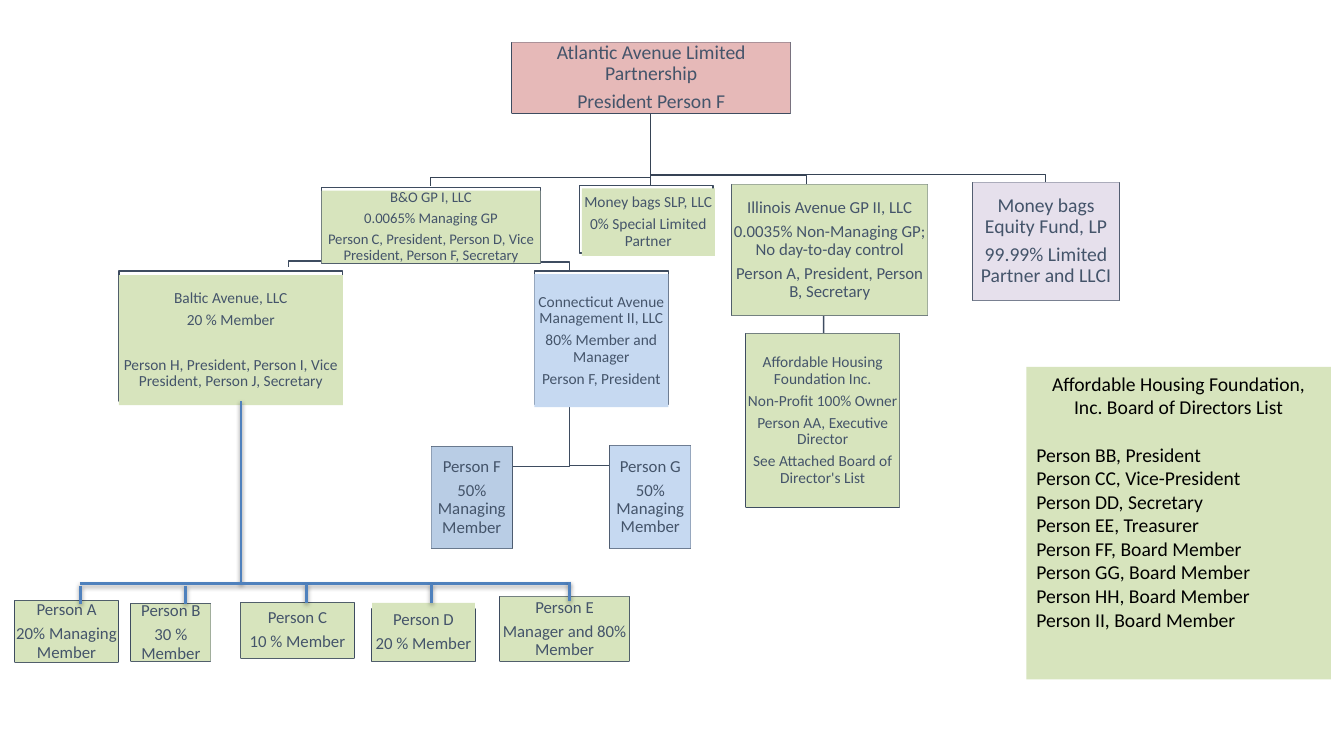
from dataclasses import dataclass
from lxml import etree
from pptx import Presentation
from pptx.dml.color import RGBColor
from pptx.enum import shapes, text
from pptx.oxml import ns
from pptx.util import Inches, Pt


@dataclass(frozen=True)
class Theme:
    font: str = "Calibri"
    ink: str = "44546A"
    black: str = "000000"
    white: str = "FFFFFF"
    border: str = "3E4C60"
    trunk: str = "364355"
    accent: str = "4F81BD"
    green: str = "D7E4BD"
    blue: str = "C6D9F1"
    steel: str = "B9CDE5"
    rose: str = "E6B9B8"
    lilac: str = "E6E0EC"
    large: float = 14
    medium: float = 12
    small: float = 11
    tiny: float = 10.5


T = Theme()

# Entities: lines, type size, fill, box (left, top, width, height), outline box if it differs
ENTITIES = [
    (["Atlantic Avenue Limited Partnership", "President Person F"],
     T.large, T.rose, (5.08, 0.42, 2.76, 0.7), None),
    (["B&O GP I, LLC", "0.0065% Managing GP",
      "Person C, President, Person D, Vice President, Person F, Secretary"],
     T.tiny, T.green, (3.19, 1.89, 2.17, 0.72), (3.19, 1.86, 2.17, 0.75)),
    (["Baltic Avenue, LLC", "20 % Member",
      "Person H, President, Person I, Vice President, Person J, Secretary"],
     T.small, T.green, (1.18, 2.73, 2.22, 1.29), (1.18, 2.69, 2.22, 1.29)),
    (["Person A", "20% Managing Member"],
     T.medium, T.green, (0.15, 5.96, 1.02, 0.61), None),
    (["Person B", "30 % Member"], T.medium, T.green, (1.3, 5.99, 0.79, 0.57), None),
    (["Person C", "10 % Member"], T.medium, T.green, (2.39, 5.98, 1.12, 0.55), None),
    (["Person D", "20 % Member"],
     T.medium, T.green, (3.69, 5.98, 1.02, 0.58), (3.69, 6.04, 1.02, 0.52)),
    (["Person E", "Manager and 80% Member"],
     T.medium, T.green, (4.96, 5.92, 1.28, 0.64), None),
    (["Connecticut Avenue Management II, LLC", "80% Member and Manager",
      "Person F, President"],
     T.small, T.blue, (5.3, 2.72, 1.33, 1.32), (5.3, 2.69, 1.33, 1.32)),
    (["Person F", "50% Managing Member"],
     T.medium, T.steel, (4.28, 4.43, 0.8, 1.01), None),
    (["Person G", "50% Managing Member"],
     T.medium, T.blue, (6.05, 4.42, 0.8, 1.02), None),
    (["Illinois Avenue GP II, LLC", "0.0035% Non-Managing GP; No day-to-day control",
      "Person A, President, Person B, Secretary"],
     T.medium, T.green, (7.26, 1.83, 1.94, 1.3), None),
    (["Affordable Housing Foundation Inc.", "Non-Profit 100% Owner",
      "Person AA, Executive Director", "See Attached Board of Director's List"],
     T.small, T.green, (7.4, 3.31, 1.52, 1.72), None),
    (["Money bags Equity Fund, LP", "99.99% Limited Partner and LLCI"],
     T.large, T.lilac, (9.65, 1.81, 1.45, 1.17), None),
    (["Money bags SLP, LLC", "0% Special Limited Partner"],
     T.small, T.green, (5.77, 1.87, 1.32, 0.67), (5.75, 1.84, 1.32, 0.67)),
]
GAP_BEFORE = {"Person H, President, Person I, Vice President, Person J, Secretary": 16}

BOARD_BOX = (10.18, 3.64, 3.02, 3.1)
BOARD_TITLE = "Affordable Housing Foundation, Inc. Board of Directors List"
BOARD = ["Person BB, President", "Person CC, Vice-President", "Person DD, Secretary",
         "Person EE, Treasurer", "Person FF, Board Member", "Person GG, Board Member",
         "Person HH, Board Member", "Person II, Board Member"]

# Ownership links: corner points of each elbow line
TOP = (6.45, 1.12)
GP = (4.27, 2.59)
CONNECTICUT = (5.65, 3.87)
TRUNK_LINKS = [
    [TOP, (6.45, 2.21), (6.41, 2.21)],
    [TOP, (6.45, 1.73), (10.37, 1.73), (10.37, 1.81)],
    [TOP, (6.45, 1.74), (8, 1.74), (8, 1.83)],
    [TOP, (6.45, 1.76), (4.27, 1.76), (4.27, 1.85)],
]
BRANCH_LINKS = [
    [(8.17, 3.08), (8.16, 4.77)],
    [CONNECTICUT, (5.65, 4.62), (6.05, 4.62)],
    [CONNECTICUT, (5.65, 4.63), (5.08, 4.63)],
    [GP, (4.27, 2.6), (5.65, 2.6), (5.65, 2.69)],
    [GP, (2.86, 2.59), (2.86, 2.65)],
]

# Baltic Avenue members: stem, bus, then drops (x, top, bottom)
BUS_Y = 5.79
BUS = [(2.39, 3.98, 2.39, BUS_Y), (0.79, BUS_Y, 5.65, BUS_Y)]
DROPS = [(5.65, 5.77, 5.96), (4.28, BUS_Y, 5.98), (3.04, BUS_Y, 5.98),
         (1.84, 5.81, 5.99), (0.8, 5.81, 5.99)]

prs = Presentation()
prs.slide_width, prs.slide_height = Inches(13.33), Inches(7.5)
slide = prs.slides.add_slide(prs.slide_layouts[6])


def color(value):
    return RGBColor.from_string(value)


def add_box(box, fill, line=None):
    sp = slide.shapes.add_shape(shapes.MSO_SHAPE.RECTANGLE, *map(Inches, box))
    sp.shadow.inherit = False
    sp.fill.solid()
    sp.fill.fore_color.rgb = color(fill)
    if line:
        sp.line.color.rgb = color(line)
        sp.line.width = Pt(1)
    else:
        sp.line.fill.background()
    return sp


def add_text(tf, content, *, size, ink=T.ink, align=text.PP_ALIGN.CENTER,
             first=False, before=0, after=0, spacing=1.0):
    p = tf.paragraphs[0] if first else tf.add_paragraph()
    p.alignment = align
    p.line_spacing = spacing
    p.space_before, p.space_after = Pt(before), Pt(after)
    r = p.add_run()
    r.text = content
    r.font.name, r.font.size = T.font, Pt(size)
    r.font.color.rgb = color(ink)


def add_entity(lines, size, fill, box, outline):
    add_box(outline or box, T.white, T.border)
    tf = add_box(box, fill).text_frame
    tf.word_wrap = True
    tf.vertical_anchor = text.MSO_ANCHOR.MIDDLE
    tf.margin_left = tf.margin_right = tf.margin_top = tf.margin_bottom = Inches(0.01)
    for i, content in enumerate(lines):
        add_text(tf, content, size=size, first=i == 0, spacing=0.9,
                 before=GAP_BEFORE.get(content, 0), after=round(0.35 * size, 1))


def add_elbow(points, line):
    corners = [(Inches(x), Inches(y)) for x, y in points]
    builder = slide.shapes.build_freeform(*corners[0])
    builder.add_line_segments(corners[1:], close=False)
    sp = builder.convert_to_shape()
    sp.shadow.inherit = False
    sp.fill.background()
    sp.line.color.rgb = color(line)
    sp.line.width = Pt(1)


def add_member_line(x1, y1, x2, y2):
    sp = slide.shapes.add_connector(shapes.MSO_CONNECTOR.STRAIGHT,
                                    *map(Inches, (x1, y1, x2, y2)))
    sp.line.color.rgb = color(T.accent)
    sp.line.width = Pt(2)
    effects = etree.SubElement(sp._element.spPr, ns.qn("a:effectLst"))
    shadow = etree.SubElement(effects, ns.qn("a:outerShdw"), blurRad=str(Pt(3.1)),
                              dist=str(Pt(1.6)), dir="5400000", rotWithShape="0")
    tint = etree.SubElement(shadow, ns.qn("a:srgbClr"), val=T.black)
    etree.SubElement(tint, ns.qn("a:alpha"), val="38000")


# Board of directors list
tf = add_box(BOARD_BOX, T.green).text_frame
tf.word_wrap = True
tf.vertical_anchor = text.MSO_ANCHOR.TOP
add_text(tf, BOARD_TITLE, size=T.large, ink=T.black, first=True)
for i, member in enumerate(BOARD):
    add_text(tf, member, size=T.large, ink=T.black, align=text.PP_ALIGN.LEFT,
             before=17 if i == 0 else 0)

# Links behind the entities
for points in TRUNK_LINKS:
    add_elbow(points, T.trunk)
for points in BRANCH_LINKS:
    add_elbow(points, T.border)

# Entities
for entity in ENTITIES:
    add_entity(*entity)

# Baltic Avenue member lines
for ends in BUS:
    add_member_line(*ends)
for x, top, bottom in DROPS:
    add_member_line(x, top, x, bottom)

prs.save("out.pptx")
